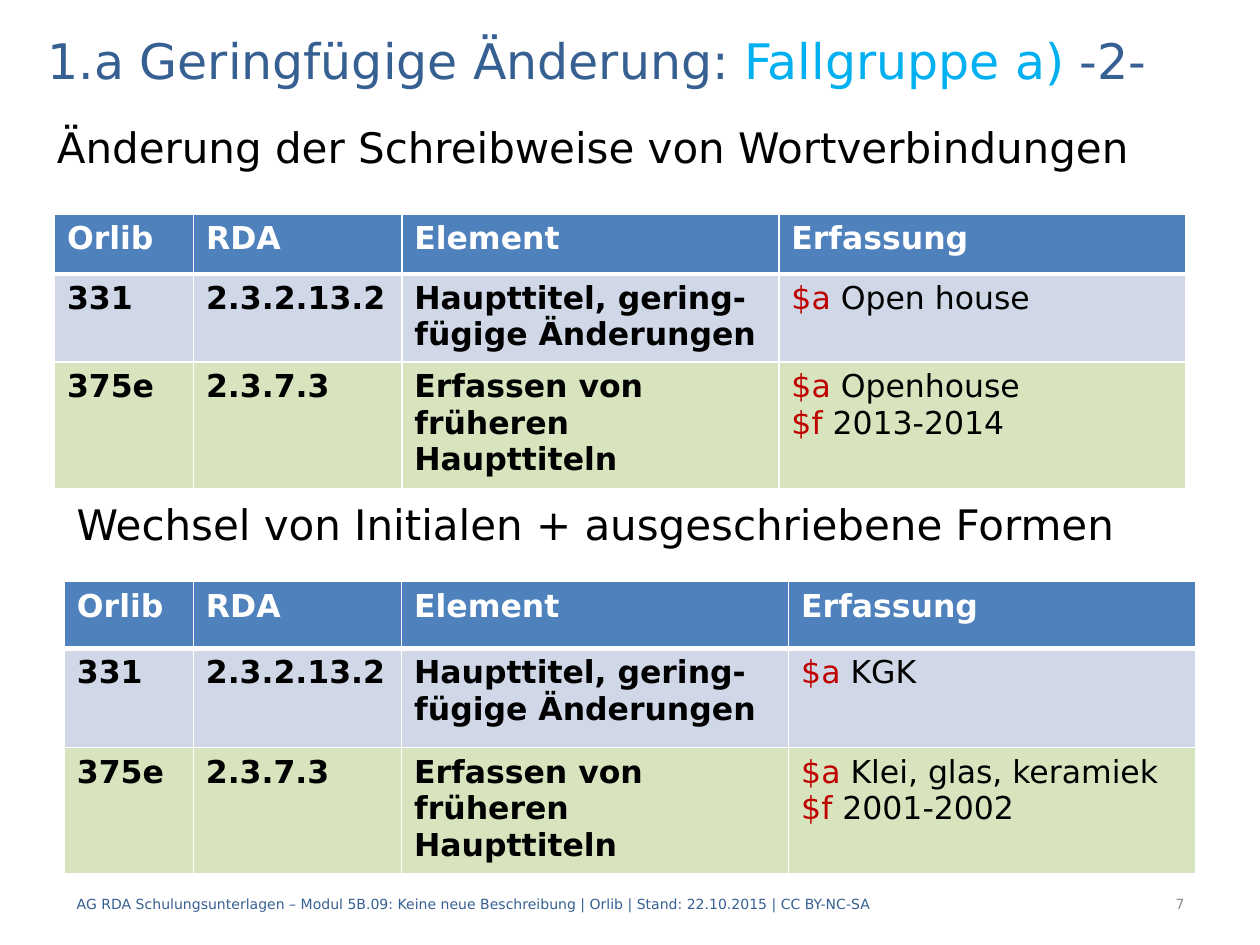
from dataclasses import dataclass

import lxml.etree
import pptx
import pptx.dml.color
import pptx.enum.text
import pptx.oxml.ns
import pptx.util

Pt = pptx.util.Pt
Align = pptx.enum.text.PP_ALIGN
Anchor = pptx.enum.text.MSO_ANCHOR

FONT = "DejaVu Sans"
SYSTEM = "Orlib"
COLORS = {
    "white": "FFFFFF",
    "black": "000000",
    "title": "376092",
    "highlight": "00B0F0",
    "subfield": "C00000",
    "page_number": "8C8C8C",
    "header": "4F81BD",
    "current": "D0D8E8",
    "earlier": "D7E4BD",
}


@dataclass
class Span:
    text: str
    color: str = "black"


@dataclass
class TextBox:
    left: float
    top: float
    width: float
    height: float
    size: float
    spans: list[Span]
    anchor: Anchor = Anchor.TOP
    align: Align = Align.LEFT


@dataclass
class TitleChange:
    """One table: the current title and the earlier title with its years."""
    left: float
    top: float
    columns: list[float]
    rows: list[float]
    current: str
    earlier: str
    years: str


TEXT_BOXES = [
    TextBox(20.2, 14, 680.4, 40.3, 28, [
        Span("1.a Geringfügige Änderung: ", "title"),
        Span("Fallgruppe a) ", "highlight"),
        Span("-2-", "title"),
    ], Anchor.MIDDLE),
    TextBox(25.4, 66.2, 657.4, 36, 24,
            [Span("Änderung der Schreibweise von Wortverbindungen")]),
    TextBox(36.7, 281.5, 652.3, 36, 24,
            [Span("Wechsel von Initialen + ausgeschriebene Formen")]),
    TextBox(36.7, 502, 583.9, 28.8, 8, [
        Span("AG RDA Schulungsunterlagen – Modul 5B.09: Keine neue Beschreibung"
             f" | {SYSTEM} | Stand: 22.10.2015 | CC BY-NC-SA", "title"),
    ], Anchor.MIDDLE),
    TextBox(569.5, 502, 114.5, 28.8, 8, [Span("7", "page_number")],
            Anchor.MIDDLE, Align.RIGHT),
]

TITLE_CHANGES = [
    TitleChange(31.1, 122.5, [79.5, 119, 215.5, 232.6], [34, 50.5, 72],
                "Open house", "Openhouse", "2013-2014"),
    TitleChange(36.8, 332.4, [73.7, 119, 221.2, 232.6], [38.2, 56.7, 71.6],
                "KGK", "Klei, glas, keramiek", "2001-2002"),
]


def rgb(color: str) -> pptx.dml.color.RGBColor:
    return pptx.dml.color.RGBColor.from_string(COLORS[color])


def write_spans(para, spans: list[Span], size: float, bold: bool = False) -> None:
    para.font.name = FONT
    para.font.size = Pt(size)
    para.font.bold = bold
    for span in spans:
        run = para.add_run()
        run.text = span.text
        run.font.color.rgb = rgb(span.color)


def add_text_box(page, item: TextBox) -> None:
    box = page.shapes.add_textbox(
        Pt(item.left), Pt(item.top), Pt(item.width), Pt(item.height))
    frame = box.text_frame
    frame.word_wrap = True
    frame.vertical_anchor = item.anchor
    para = frame.paragraphs[0]
    para.alignment = item.align
    write_spans(para, item.spans, item.size)


def set_borders(cell, bottom: float, top: float) -> None:
    """Draw white cell borders, placed before the fill as the schema asks."""
    properties = cell._tc.get_or_add_tcPr()
    widths = {"lnL": 1, "lnR": 1, "lnT": top, "lnB": bottom}
    for index, (side, width) in enumerate(widths.items()):
        line = lxml.etree.Element(pptx.oxml.ns.qn(f"a:{side}"), w=str(Pt(width)))
        fill = lxml.etree.SubElement(line, pptx.oxml.ns.qn("a:solidFill"))
        lxml.etree.SubElement(
            fill, pptx.oxml.ns.qn("a:srgbClr"), val=COLORS["white"])
        properties.insert(index, line)


def add_title_table(page, change: TitleChange) -> None:
    def label(text: str, color: str = "black") -> list[list[Span]]:
        return [[Span(text, color)]]

    def subfield(code: str, value: str) -> list[Span]:
        return [Span(f"{code} ", "subfield"), Span(value)]

    content = [
        [label(text, "white") for text in (SYSTEM, "RDA", "Element", "Erfassung")],
        [label("331"), label("2.3.2.13.2"),
         label("Haupttitel, gering-fügige Änderungen"),
         [subfield("$a", change.current)]],
        [label("375e"), label("2.3.7.3"),
         label("Erfassen von früheren Haupttiteln"),
         [subfield("$a", change.earlier), subfield("$f", change.years)]],
    ]
    table = page.shapes.add_table(
        len(change.rows), len(change.columns), Pt(change.left), Pt(change.top),
        Pt(sum(change.columns)), Pt(sum(change.rows))).table
    table.horz_banding = False
    for column, width in zip(table.columns, change.columns):
        column.width = Pt(width)
    for row, height in zip(table.rows, change.rows):
        row.height = Pt(height)

    last_column = len(change.columns) - 1
    for row_index, fill in enumerate(("header", "current", "earlier")):
        for column_index, lines in enumerate(content[row_index]):
            cell = table.cell(row_index, column_index)
            cell.fill.solid()
            cell.fill.fore_color.rgb = rgb(fill)
            set_borders(cell, bottom=3 if row_index == 0 else 1,
                        top=3 if row_index == 1 else 1)
            bold = row_index == 0 or column_index < last_column
            frame = cell.text_frame
            for line_index, spans in enumerate(lines):
                para = frame.add_paragraph() if line_index else frame.paragraphs[0]
                write_spans(para, spans, 18, bold)


def main() -> None:
    deck = pptx.Presentation()
    deck.slide_width, deck.slide_height = Pt(720), Pt(540)
    page = deck.slides.add_slide(deck.slide_layouts[6])
    for item in TEXT_BOXES:
        add_text_box(page, item)
    for change in TITLE_CHANGES:
        add_title_table(page, change)
    deck.save("out.pptx")


if __name__ == "__main__":
    main()
